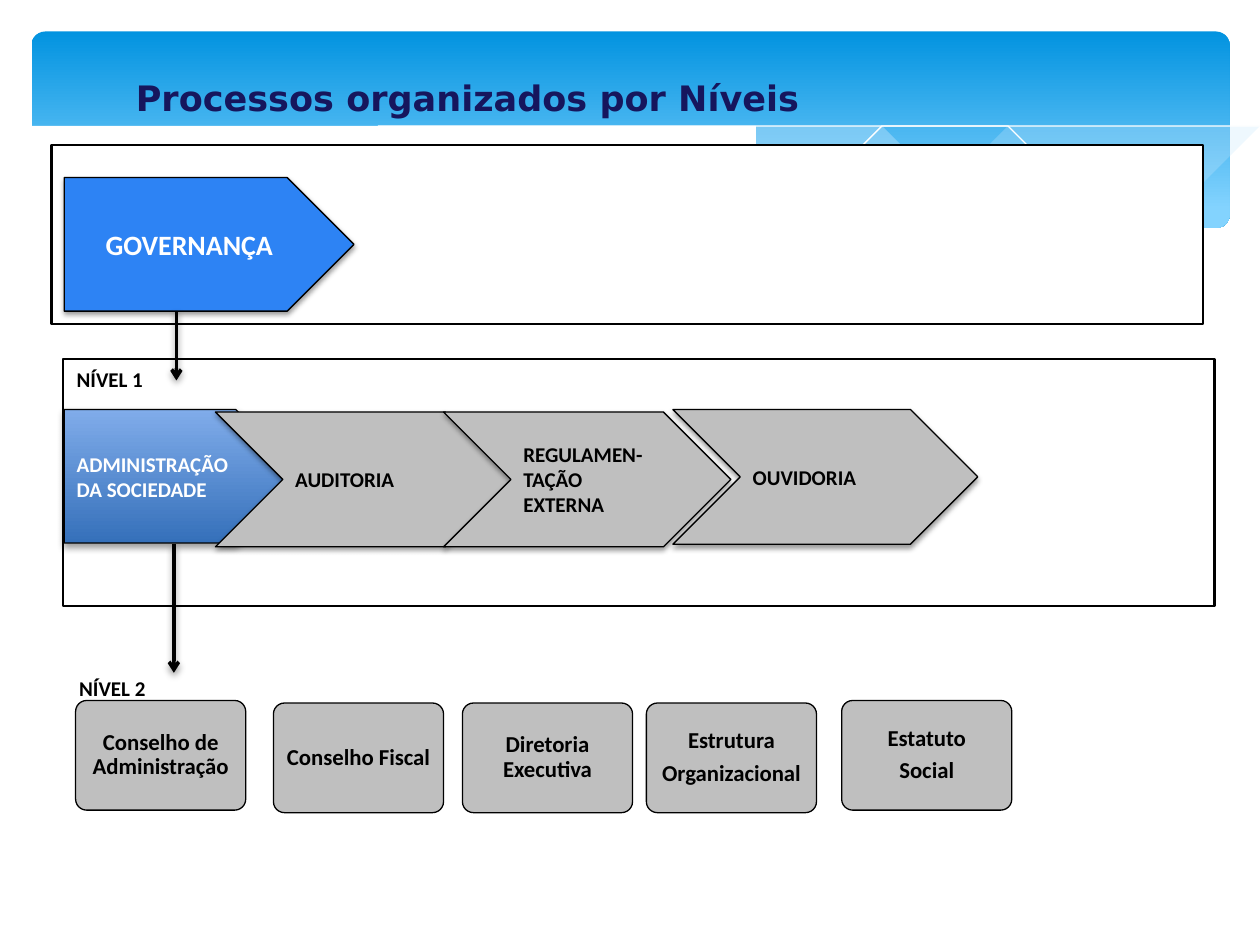
from lxml import etree
from pptx import Presentation
from pptx import util as u
from pptx.dml.color import RGBColor
from pptx.enum import shapes as sh, text as tx
from pptx.oxml.ns import qn

BLACK = RGBColor(0, 0, 0)
WHITE = RGBColor(255, 255, 255)
GRAY = RGBColor(0xBF, 0xBF, 0xBF)
BLUE = RGBColor(0x2D, 0x83, 0xF4)
NAVY = RGBColor(0x16, 0x16, 0x5D)
PALE = RGBColor(0xC6, 0xE7, 0xFC)
SKY = ((0, RGBColor(0x02, 0x93, 0xE0)), (0.9, RGBColor(0x83, 0xD3, 0xFE)))
STEEL = ((0, RGBColor(0x80, 0xAC, 0xEA)), (1, RGBColor(0x35, 0x70, 0xBA)))

KIND = sh.MSO_SHAPE
LEFT, MID = tx.PP_ALIGN.LEFT, tx.PP_ALIGN.CENTER

RIGHT = [(9.76, 0.94), (9.48, 0.99), (9.06, 1.07), (8.61, 1.18), (8.05, 1.31),
         (7.53, 1.43), (7.06, 1.52), (6.61, 1.6), (7.05, 1.65), (7.45, 1.69),
         (7.81, 1.72), (8.14, 1.72), (8.44, 1.71), (8.72, 1.69), (8.97, 1.65),
         (9.21, 1.6), (9.49, 1.52), (9.76, 1.41)]
BAND = [(8.93, 1.67), (8.66, 1.64), (8.07, 1.54), (7.41, 1.42), (6.68, 1.26),
        (6.29, 1.16), (5.84, 1.06), (5.41, 0.97), (5.02, 0.9), (4.65, 0.86),
        (4.2, 0.82), (3.8, 0.8), (3.44, 0.8), (3.13, 0.82), (2.86, 0.86),
        (3.23, 0.9), (3.62, 0.97), (4.04, 1.06), (4.49, 1.16), (5.3, 1.35),
        (5.84, 1.46), (6.34, 1.56), (6.8, 1.63), (7.22, 1.68), (7.61, 1.71),
        (8.07, 1.73), (8.48, 1.72)]
CREST = [(3.09, 0.9), (3.28, 0.86), (3.53, 0.84), (3.87, 0.82), (4.16, 0.81),
         (4.5, 0.82), (4.89, 0.84), (5.33, 0.88), (5.82, 0.94), (6.36, 1.03),
         (6.95, 1.14), (7.6, 1.28), (8.31, 1.45), (9.07, 1.66)]
RISE = [(6.13, 1.51), (6.53, 1.41), (6.95, 1.3), (7.48, 1.17), (8.06, 1.04),
        (8.66, 0.93), (8.95, 0.88), (9.24, 0.84), (9.51, 0.82), (9.75, 0.8)]
FRONT = [(9.77, 1.41), (9.5, 1.51), (9.2, 1.59), (8.87, 1.66), (8.5, 1.7),
         (8.09, 1.71), (7.61, 1.7), (7.08, 1.65), (6.48, 1.56), (5.79, 1.44),
         (5.03, 1.28), (4.47, 1.14), (3.91, 1.02), (3.4, 0.92), (2.92, 0.85),
         (2.5, 0.81), (2.11, 0.78), (1.77, 0.78), (1.46, 0.79), (1.19, 0.82),
         (0.95, 0.85), (0.76, 0.89), (0.59, 0.93), (0.46, 0.98), (0.36, 1.02),
         (0.23, 1.07), (0.23, 2.24), (9.77, 2.24)]


def apply(obj, **vals):
    for key, val in vals.items():
        setattr(obj, key, val)


def paint(item, fill=None, line=None, width=0.75):
    if fill is None:
        item.fill.background()
    elif isinstance(fill, tuple) and not isinstance(fill, RGBColor):
        item.fill.gradient()
        item.fill.gradient_angle = 270
        for stop, (pos, tone) in zip(item.fill.gradient_stops, fill):
            stop.position = pos
            stop.color.rgb = tone
    else:
        item.fill.solid()
        item.fill.fore_color.rgb = fill
    if line is None:
        item.line.fill.background()
    else:
        item.line.color.rgb = line
        item.line.width = u.Pt(width)


def shade(item, blur, dist):
    props = item._element.spPr
    for old in props.findall(qn("a:effectLst")):
        props.remove(old)
    fx = etree.SubElement(props, qn("a:effectLst"))
    drop = etree.SubElement(fx, qn("a:outerShdw"), blurRad=str(u.Pt(blur)),
                            dist=str(u.Pt(dist)), dir="5400000", rotWithShape="0")
    tone = etree.SubElement(drop, qn("a:srgbClr"), val="000000")
    etree.SubElement(tone, qn("a:alpha"), val="38000")


def write(item, lines, size, tone=BLACK, face="Calibri", align=LEFT, **para):
    frame = item.text_frame
    frame.word_wrap = True
    for i, line in enumerate(lines.split("\n")):
        par = frame.add_paragraph() if i else frame.paragraphs[0]
        apply(par, alignment=align, **para)
        run = par.add_run()
        run.text = line
        apply(run.font, name=face, size=u.Pt(size), bold=True)
        run.font.color.rgb = tone


def block(slide, kind, place, fill, line=None, width=0.75):
    item = slide.shapes.add_shape(kind, *map(u.Inches, place))
    item.shadow.inherit = False
    paint(item, fill, line, width)
    return item


def wave(slide, dots, fill=None, line=None, alpha=None):
    form = slide.shapes.build_freeform(*dots[0], scale=u.Inches(1))
    form.add_line_segments(dots[1:], close=fill is not None)
    item = form.convert_to_shape()
    item.shadow.inherit = False
    paint(item, fill, line, 0)
    if alpha:
        tone = item._element.spPr.find(qn("a:solidFill"))[0]
        etree.SubElement(tone, qn("a:alpha"), val=str(alpha * 1000))


def label(slide, place, words, size, **form):
    item = slide.shapes.add_textbox(*map(u.Inches, place))
    write(item, words, size, **form)


def step(slide, kind, place, words, fill, size=12, blur=(3.1, 1.6), **form):
    item = block(slide, kind, place, fill, BLACK)
    shade(item, *blur)
    item.text_frame.vertical_anchor = tx.MSO_ANCHOR.MIDDLE
    write(item, words, size, **form)


def arrow(slide, x, top, end):
    item = slide.shapes.add_connector(sh.MSO_CONNECTOR.STRAIGHT,
                                      *map(u.Inches, (x, top, x, end)))
    item.line.color.rgb = BLACK
    item.line.width = u.Pt(2)
    etree.SubElement(item.line._get_or_add_ln(), qn("a:tailEnd"), type="arrow")
    shade(item, 4, 2)


def card(slide, left, top, words):
    item = block(slide, KIND.ROUNDED_RECTANGLE, (left, top, 1.35, 0.87), GRAY, BLACK)
    item.adjustments[0] = 0.1
    sides = ("left", "top", "right", "bottom")
    apply(item.text_frame, vertical_anchor=tx.MSO_ANCHOR.MIDDLE,
          **{f"margin_{side}": u.Inches(0.08) for side in sides})
    write(item, words, 13, align=MID, line_spacing=0.9, space_after=u.Pt(4.55))


def header(slide):
    base = block(slide, KIND.ROUNDED_RECTANGLE, (0.25, 0.25, 9.51, 1.56), SKY)
    base.adjustments[0] = 0.07
    wave(slide, RIGHT, PALE, alpha=29)
    wave(slide, BAND, PALE, alpha=40)
    wave(slide, CREST, line=WHITE)
    wave(slide, RISE, line=WHITE)
    wave(slide, FRONT, WHITE)


def main():
    deck = Presentation()
    apply(deck, slide_width=u.Inches(10), slide_height=u.Inches(7.5))
    slide = deck.slides.add_slide(deck.slide_layouts[6])
    header(slide)
    for place in ((0.41, 1.15, 9.14, 1.42), (0.5, 2.85, 9.14, 1.96)):
        block(slide, KIND.RECTANGLE, place, WHITE, BLACK, 1.25)
    label(slide, (0.51, 2.86, 0.95, 0.3), "NÍVEL 1", 12)
    label(slide, (0.98, 0.56, 7.87, 0.44), "Processos organizados por Níveis", 20,
          tone=NAVY, face="DejaVu Sans")
    step(slide, KIND.PENTAGON, (0.51, 1.41, 2.3, 1.06), "GOVERNANÇA ", BLUE, 16,
         tone=WHITE, align=MID)
    step(slide, KIND.PENTAGON, (0.51, 3.25, 1.89, 1.06), "ADMINISTRAÇÃO DA SOCIEDADE",
         STEEL, blur=(4, 2), tone=WHITE)
    for left, top, width, words in ((1.71, 3.27, 2.36, "AUDITORIA"),
                                    (3.52, 3.27, 2.28, "REGULAMEN-TAÇÃO EXTERNA"),
                                    (5.34, 3.25, 2.42, "OUVIDORIA")):
        step(slide, KIND.CHEVRON, (left, top, width, 1.07), words, GRAY)
    arrow(slide, 1.4, 2.47, 3.02)
    label(slide, (0.53, 5.31, 0.95, 0.3), "NÍVEL 2", 12)
    arrow(slide, 1.38, 4.32, 5.34)
    for left, top, words in ((0.6, 5.56, "Conselho de Administração"),
                             (2.17, 5.58, "Conselho Fiscal"),
                             (3.67, 5.58, "Diretoria Executiva"),
                             (5.13, 5.58, "Estrutura\nOrganizacional"),
                             (6.68, 5.56, "Estatuto\nSocial")):
        card(slide, left, top, words)
    deck.save("out.pptx")


if __name__ == "__main__":
    main()
